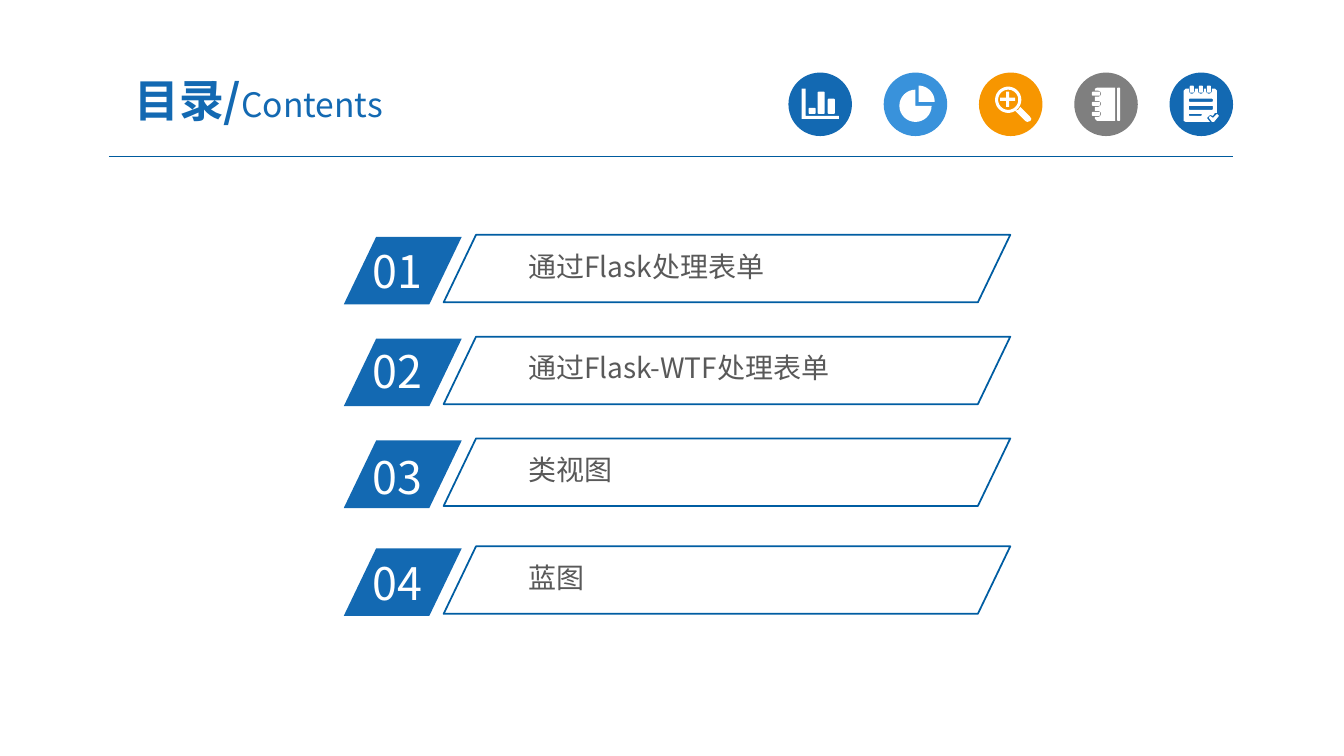
from math import cos, radians, sin

from lxml import etree
from pptx import Presentation
from pptx.dml.color import RGBColor
from pptx.enum.shapes import MSO_CONNECTOR, MSO_SHAPE
from pptx.enum.text import MSO_ANCHOR, MSO_AUTO_SIZE, PP_ALIGN
from pptx.oxml.ns import qn
from pptx.util import Inches, Pt

FONT = "Noto Sans CJK SC"
COLORS = {
    "blue": "1369B2", "sky": "3992DB", "orange": "F79600", "gray": "7F7F7F",
    "rule": "005B9E", "outline": "005DA2", "text": "595959", "white": "FFFFFF",
}
# Top of the frame, top of the number, number, label
ROWS = [
    (2.33, 2.37, "01", "通过Flask处理表单"),
    (3.34, 3.36, "02", "通过Flask-WTF处理表单"),
    (4.35, 4.41, "03", "类视图"),
    (5.42, 5.46, "04", "蓝图"),
]


def rgb(name):
    return RGBColor.from_string(COLORS[name])


def arc(cx, cy, radius, start, end, steps=24):
    """Points of an arc; degrees run clockwise from the right."""
    angles = [radians(start + (end - start) * i / steps) for i in range(steps + 1)]
    return [(cx + radius * cos(a), cy + radius * sin(a)) for a in angles]


def box(left, top, right, bottom, radius=0.01):
    """Points of a rectangle with rounded corners."""
    l, t, r, b = left + radius, top + radius, right - radius, bottom - radius
    corners = [(l, t, 180), (r, t, 270), (r, b, 0), (l, b, 90)]
    return [pt for x, y, a in corners for pt in arc(x, y, radius, a, a + 90, 6)]


def bar_chart_icon():
    axes = [(7.95, 0.88), (7.99, 0.88), (7.99, 1.15), (8.32, 1.15),
            (8.32, 1.18), (7.95, 1.18)]
    bars = [(8.02, 1.07), (8.11, 0.91), (8.21, 0.98)]
    return [axes] + [box(x, y, x + 0.07, 1.13) for x, y in bars]


def pie_icon():
    return [[(9.11, 1.01)] + arc(9.11, 1.01, 0.16, -90, 0),
            [(9.08, 1.05)] + arc(9.08, 1.05, 0.16, 0, 270)]


def magnifier_icon():
    lens = [arc(10, 0.99, r, 0, 360, 48) for r in (0.13, 0.1)]
    handle = [(10.07, 1.1), (10.17, 1.2), (10.19, 1.21), (10.22, 1.2),
              (10.23, 1.18), (10.21, 1.15), (10.12, 1.06), (10.1, 1.09)]
    plus = [(9.98, 0.91), (10.01, 0.91), (10.01, 0.97), (10.07, 0.97),
            (10.07, 1), (10.01, 1), (10.01, 1.06), (9.98, 1.06),
            (9.98, 1), (9.92, 1), (9.92, 0.97), (9.98, 0.97)]
    return lens + [handle, plus]


def notebook_icon():
    rings = (0.93, 1.03, 1.13)
    cover = [(11.06, 1.2), (11.06, 0.87), (10.88, 0.87), (10.86, 0.88)]
    for y in rings:
        cover += [(10.86, y - 0.03)] + arc(10.89, y, 0.03, -90, 90) + [(10.86, y + 0.03)]
    cover += [(10.86, 1.18), (10.88, 1.2)]
    return [cover, box(11.08, 0.87, 11.11, 1.2)] + [
        box(10.83, y - 0.02, 10.91, y + 0.02) for y in rings]


def notepad_icon():
    rings = (11.82, 11.91, 11.99)
    page = [(11.74, 1.2), (11.74, 0.9), (11.76, 0.88)]
    for x in rings:
        page += [(x - 0.03, 0.88)] + arc(x, 0.9, 0.03, 180, 0) + [(x + 0.03, 0.88)]
    page += [(12.05, 0.88), (12.07, 0.9), (12.07, 1.12), (12.05, 1.12),
             (12.03, 1.15), (12, 1.14), (11.97, 1.17), (12, 1.21), (11.76, 1.21)]
    check = [(11.99, 1.17), (12, 1.15), (12.03, 1.17), (12.07, 1.13),
             (12.09, 1.15), (12.04, 1.21), (12.02, 1.21)]
    lines = [box(11.79, 0.98, 12.03, 1.01), box(11.79, 1.05, 12.03, 1.09),
             box(11.79, 1.13, 11.92, 1.15)]
    return [page, check] + lines + [box(x - 0.02, 0.85, x + 0.02, 0.92) for x in rings]


def add_run(p, text, size, color, bold=False):
    r = p.add_run()
    r.text = text
    r.font.name, r.font.size, r.font.bold = FONT, Pt(size), bold
    r.font.color.rgb = rgb(color)
    etree.SubElement(r.font._element, qn("a:ea")).set("typeface", FONT)


class ContentsSlide:
    def __init__(self, prs):
        self.slide = prs.slides.add_slide(prs.slide_layouts[5])
        self.shapes = self.slide.shapes

    def title(self, left, top, width, height, runs):
        sp = self.shapes.title
        sp.left, sp.top, sp.width, sp.height = map(Inches, (left, top, width, height))
        tf = sp.text_frame
        tf.auto_size, tf.word_wrap = MSO_AUTO_SIZE.NONE, True
        tf.vertical_anchor = MSO_ANCHOR.MIDDLE
        tf.margin_left = tf.margin_right = Inches(0.13)
        tf.margin_top = tf.margin_bottom = Inches(0.07)
        p = tf.paragraphs[0]
        p.alignment, p.space_before = PP_ALIGN.CENTER, Pt(0)
        for text, size, bold in runs:
            add_run(p, text, size, "blue", bold=bold)

    def text(self, left, top, width, height, text, margins=(0.1, 0.05), **fmt):
        sp = self.shapes.add_textbox(*map(Inches, (left, top, width, height)))
        tf = sp.text_frame
        tf.word_wrap, tf.auto_size = True, MSO_AUTO_SIZE.SHAPE_TO_FIT_TEXT
        tf.margin_left = tf.margin_right = Inches(margins[0])
        tf.margin_top = tf.margin_bottom = Inches(margins[1])
        add_run(tf.paragraphs[0], text, **fmt)

    def paint(self, sp, fill=None, line=None):
        sp.shadow.inherit = False
        if fill:
            sp.fill.solid()
            sp.fill.fore_color.rgb = rgb(fill)
        else:
            sp.fill.background()
        if line:
            sp.line.color.rgb, sp.line.width = rgb(line), Pt(1.25)
        else:
            sp.line.fill.background()

    def shape(self, kind, left, top, width, height, adj=None, **style):
        sp = self.shapes.add_shape(kind, *map(Inches, (left, top, width, height)))
        if adj is not None:
            sp.adjustments[0] = adj
        self.paint(sp, **style)

    def outline(self, contours, fill):
        """Draw all contours as one shape; inner contours become holes."""
        paths = [[(Inches(x), Inches(y)) for x, y in c] for c in contours]
        builder = self.shapes.build_freeform(*paths[0][0])
        for i, path in enumerate(paths):
            if i:
                builder.move_to(*path[0])
            builder.add_line_segments(path[1:], close=True)
        self.paint(builder.convert_to_shape(), fill=fill)

    def rule(self, x1, x2, y):
        line = self.shapes.add_connector(
            MSO_CONNECTOR.STRAIGHT, *map(Inches, (x1, y, x2, y)))
        line.line.color.rgb, line.line.width = rgb("rule"), Pt(0.75)
        etree.SubElement(line._element.spPr, qn("a:effectLst"))


def main():
    prs = Presentation()
    prs.slide_width, prs.slide_height = Inches(13.33), Inches(7.5)
    s = ContentsSlide(prs)

    s.rule(1.08, 12.23, 1.55)
    icons = [("blue", bar_chart_icon), ("sky", pie_icon), ("orange", magnifier_icon),
             ("gray", notebook_icon), ("blue", notepad_icon)]
    for i, (color, icon) in enumerate(icons):
        s.shape(MSO_SHAPE.OVAL, 7.82 + 0.945 * i, 0.72, 0.63, 0.63, fill=color)
        s.outline(icon(), "white")

    s.title(0.92, 0.63, 3.29, 0.72, [("目录/", 32, True), ("Contents", 24, False)])
    for top, number_top, number, label in ROWS:
        s.shape(MSO_SHAPE.PARALLELOGRAM, 3.41, top + 0.02, 1.17, 0.67,
                adj=0.48, fill="blue")
        s.text(3.6, number_top, 1.12, 0.64, number, size=32, color="white")
        s.text(5.17, top + 0.1, 4.12, 0.41, label, margins=(0.07, 0.04),
               size=20, color="text")
        s.shape(MSO_SHAPE.PARALLELOGRAM, 4.4, top, 5.62, 0.67,
                adj=0.48, line="outline")
    prs.save("out.pptx")


if __name__ == "__main__":
    main()
